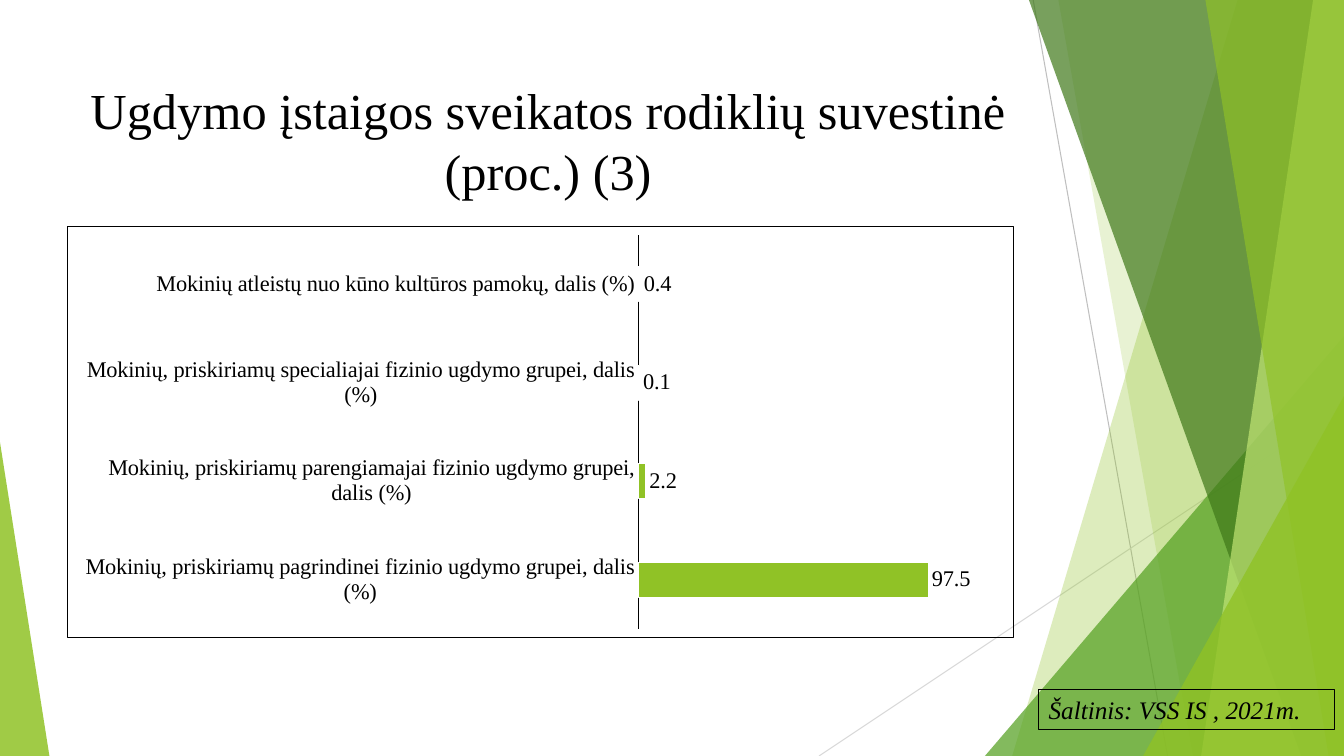
from lxml import etree
from pptx import Presentation
from pptx.chart.data import CategoryChartData as ChartData
from pptx.dml.color import RGBColor as RGB
from pptx.enum.chart import XL_CHART_TYPE as Kind, XL_LABEL_POSITION as Spot
from pptx.enum.chart import XL_TICK_MARK as Tick
from pptx.enum.shapes import MSO_CONNECTOR as Link, MSO_SHAPE as Form
from pptx.enum.text import MSO_ANCHOR as Anchor, PP_ALIGN as Align
from pptx.oxml import parse_xml
from pptx.oxml.ns import nsdecls, qn
from pptx.util import Pt

WIDE, HIGH = 960, 540
SERIF = "Times New Roman"
LIME, BLACK = "90C226", "000000"

# Colour, opacity and the x of each corner: top left, top right, foot right, foot left
BANDS = [
    (LIME, 30, (884, WIDE, WIDE, 723)),
    (LIME, 20, (756, WIDE, WIDE, 852)),
    ("3F7819", 70, (735, WIDE, WIDE, 929.5)),
    ("C0E474", 70, (938, WIDE, WIDE, 858)),
    (LIME, 65, (861, WIDE, WIDE, 949)),
]
RATES = [
    ("Mokinių, priskiriamų pagrindinei fizinio ugdymo grupei, dalis (%)", 97.5),
    ("Mokinių, priskiriamų parengiamajai fizinio ugdymo grupei, dalis (%)", 2.2),
    ("Mokinių, priskiriamų specialiajai fizinio ugdymo grupei, dalis (%)", 0.1),
    ("Mokinių atleistų nuo kūno kultūros pamokų, dalis (%)", 0.4),
]


def paint(part, color, alpha=100):
    """Fill a fill or line format with a hex colour at an opacity in percent."""
    part.solid()
    part.fore_color.rgb = RGB.from_string(color)
    if alpha < 100:
        tint = part._xPr.find(".//" + qn("a:srgbClr"))
        etree.SubElement(tint, qn("a:alpha")).set("val", str(alpha * 1000))


def rule(line, color, width=0.75):
    paint(line.fill, color)
    line.width = Pt(width)


def style(font, size, color=BLACK, name=SERIF):
    font.size, font.name = Pt(size), name
    paint(font.fill, color)


def glaze(shape, color, alpha):
    """Give a shape a see-through fill with no outline or shadow."""
    shape.shadow.inherit = False
    shape.line.fill.background()
    paint(shape.fill, color, alpha)


def ray(slide, start, end, color):
    line = slide.shapes.add_connector(Link.STRAIGHT, *map(Pt, start + end))
    rule(line.line, color)
    etree.SubElement(line._element.spPr, qn("a:effectLst"))


def band(slide, color, alpha, xs):
    """Draw a four-cornered strip over the full height of the slide."""
    dots = [(Pt(x), Pt(y)) for x, y in zip(xs, (0, 0, HIGH, HIGH))]
    pen = slide.shapes.build_freeform(*dots[0])
    pen.add_line_segments(dots[1:], close=True)
    glaze(pen.convert_to_shape(), color, alpha)


def wedge(slide, left, top, width, peak, color, alpha):
    """Draw a triangle that stands on the foot of the slide."""
    box = map(Pt, (left, top, width, HIGH - top))
    shape = slide.shapes.add_shape(Form.ISOSCELES_TRIANGLE, *box)
    shape.adjustments[0] = peak
    glaze(shape, color, alpha)


def backdrop(slide):
    ray(slide, (738, 0), (834, HIGH), "BFBFBF")
    ray(slide, (WIDE, 290), (585, HIGH), "D9D9D9")
    for item in BANDS[:2]:
        band(slide, *item)
    wedge(slide, 703.5, 240, WIDE - 703.5, 1, "54A021", 72)
    for item in BANDS[2:]:
        band(slide, *item)
    wedge(slide, 816.5, 283, WIDE - 816.5, 1, LIME, 80)
    wedge(slide, 0, 316, 35.3, 0, LIME, 85)


def label(slide, box, text, size, align, italic=None):
    shape = slide.shapes.add_textbox(*map(Pt, box))
    frame = shape.text_frame
    frame.word_wrap = True
    frame.vertical_anchor = Anchor.MIDDLE
    para = frame.paragraphs[0]
    para.alignment = align
    run = para.add_run()
    run.text = text
    style(run.font, size)
    run.font.italic = italic
    return shape


def source(slide, box, text):
    shape = label(slide, box, text, 18, Align.LEFT, True)
    rule(shape.line, BLACK)


def frame(chart):
    """Fix the plot area and draw a border round the chart."""
    spots = dict(x=0.604, y=0.02, w=0.376, h=0.96)
    sides = "".join(f'<c:{k}Mode val="edge"/>' for k in "xy")
    sides += "".join(f'<c:{k} val="{v}"/>' for k, v in spots.items())
    plan = parse_xml(f'<c:layout {nsdecls("c")}><c:manualLayout>'
                     f'<c:layoutTarget val="inner"/>{sides}'
                     '</c:manualLayout></c:layout>')
    space = chart._chartSpace
    area = space.chart.plotArea
    for old in area.findall(qn("c:layout")):
        area.remove(old)
    area.insert(0, plan)
    space.chart.addnext(parse_xml(
        f'<c:spPr {nsdecls("c", "a")}><a:noFill/><a:ln w="{Pt(0.75)}"><a:solidFill>'
        f'<a:srgbClr val="{BLACK}"/></a:solidFill></a:ln></c:spPr>'))


def bars(slide, box):
    data = ChartData()
    data.categories = [name for name, _ in RATES]
    data.add_series("Series 1", [rate for _, rate in RATES])
    chart = slide.shapes.add_chart(Kind.BAR_CLUSTERED, *map(Pt, box), data).chart
    style(chart.font, 10, name="Cabin")
    chart.has_legend = chart.has_title = False
    frame(chart)

    names, scale = chart.category_axis, chart.value_axis
    names.major_tick_mark = names.minor_tick_mark = Tick.NONE
    names.has_major_gridlines = scale.has_major_gridlines = False
    style(names.tick_labels.font, 16)
    rule(names.format.line, BLACK)
    scale.minimum_scale, scale.maximum_scale = 0, 120
    scale.visible = False

    plot = chart.plots[0]
    plot.gap_width = 182
    plot.vary_by_categories = False
    rates = plot.series[0]
    paint(rates.format.fill, LIME)
    rule(rates.format.line, "FFFFFF")
    tags = rates.data_labels
    tags.show_value = True
    tags.position = Spot.OUTSIDE_END
    style(tags.font, 16)


def main():
    deck = Presentation()
    deck.slide_width, deck.slide_height = Pt(WIDE), Pt(HIGH)
    slide = deck.slides.add_slide(deck.slide_layouts[6])
    backdrop(slide)
    label(slide, (53, 48, 677, 104),
          "Ugdymo įstaigos sveikatos rodiklių suvestinė (proc.) (3)", 36, Align.CENTER)
    source(slide, (742, 492.3, 211, 29), "Šaltinis: VSS IS , 2021m.")
    bars(slide, (47.5, 161.5, 677, 294))
    deck.save("out.pptx")


if __name__ == "__main__":
    main()
